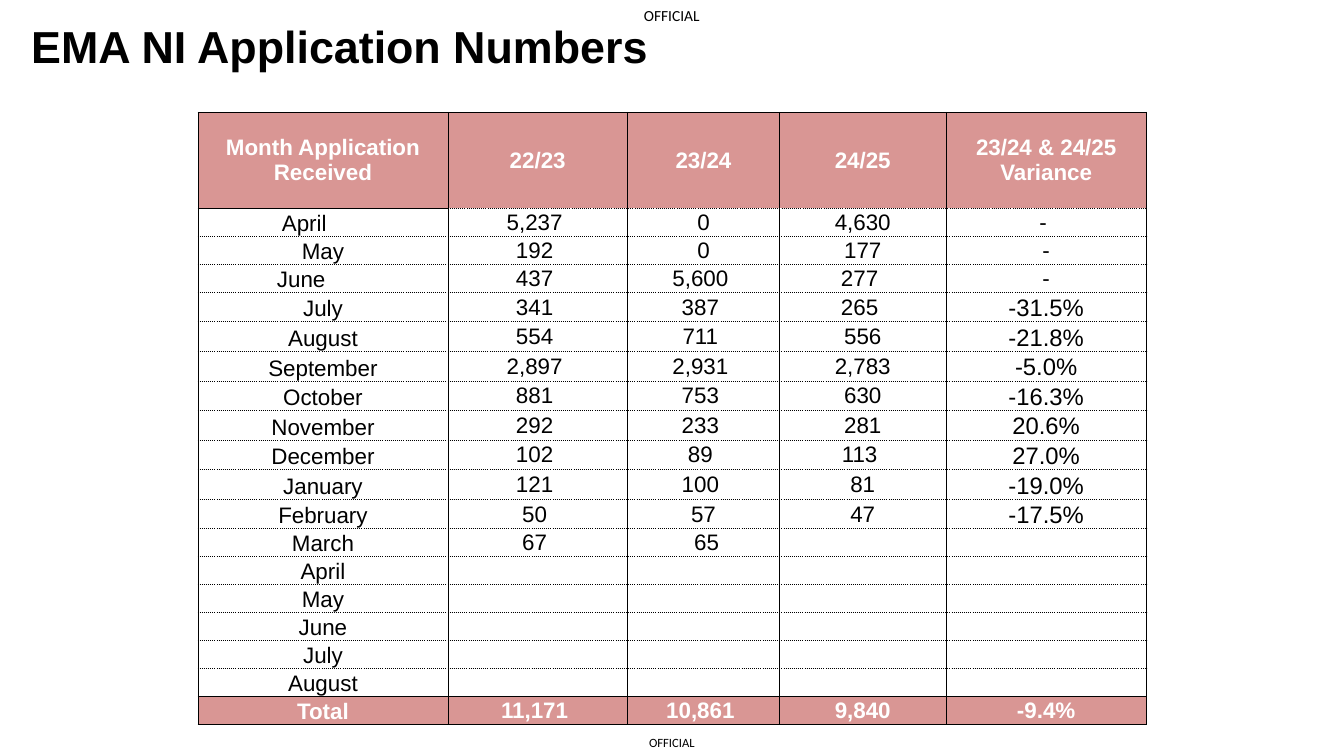
from dataclasses import dataclass

import lxml.etree
import pptx
import pptx.dml.color
import pptx.enum.text
import pptx.oxml.ns
import pptx.util

Pt = pptx.util.Pt
RGBColor = pptx.dml.color.RGBColor
Anchor = pptx.enum.text.MSO_ANCHOR
Align = pptx.enum.text.PP_ALIGN
qn = pptx.oxml.ns.qn

BLACK = RGBColor(0x00, 0x00, 0x00)
WHITE = RGBColor(0xFF, 0xFF, 0xFF)
ROSE = RGBColor(0xD9, 0x96, 0x94)

BODY_SIZE = 16
VARIANCE_SIZE = 17
CELL_INSET = 0.7
HEADER_HEIGHT = 68.6
ROW_HEIGHT = 20
VARIANCE_ROW_HEIGHT = 20.95
COLUMN_WIDTHS = (178.6, 128.2, 108.7, 118.8, 143.3)


@dataclass(frozen=True)
class Marking:
    left: float
    top: float
    width: float
    height: float
    size: float


@dataclass(frozen=True)
class Record:
    """One table row; month_shift is extra space to the right of the month."""
    values: tuple[str, ...]
    month_shift: float = 0

    @property
    def has_variance(self) -> bool:
        return self.values[-1].endswith("%")


MARKINGS = (
    Marking(453.6, 520.6, 52.6, 19.4, 9),
    Marking(448.6, 0, 62.6, 22.3, 11),
)
HEADINGS = Record(("Month Application Received", "22/23", "23/24", "24/25",
                   "23/24 & 24/25 Variance"))
MONTHS = (
    Record(("April", "5,237 ", "0", "4,630", "- "), month_shift=26.7),
    Record(("May", "192 ", "0", "177", "-")),
    Record(("June", "437 ", "5,600 ", "277 ", "-"), month_shift=31.1),
    Record(("July", "341 ", "387 ", "265 ", "-31.5%")),
    Record(("August", "554 ", "711 ", "556", "-21.8%")),
    Record(("September", "2,897 ", "2,931 ", "2,783", "-5.0%")),
    Record(("October", "881 ", "753 ", "630", "-16.3%")),
    Record(("November", "292 ", "233 ", "281", "20.6%")),
    Record(("December", "102 ", "89 ", "113 ", "27.0%")),
    Record(("January", "121 ", "100 ", "81", "-19.0%")),
    Record(("February", "50 ", "57", "47", "-17.5%")),
    Record(("March", "67 ", " 65", "", "")),
    *(Record((month, "", "", "", ""))
      for month in ("April", "May", "June", "July", "August")),
)
TOTAL = Record(("Total", "11,171 ", "10,861 ", "9,840", "-9.4%"))
RECORDS = (HEADINGS, *MONTHS, TOTAL)
TOTAL_ROW = len(RECORDS) - 1


def add_run(paragraph, text: str, size: float, font: str = "Arial",
            color: RGBColor = BLACK, bold: bool = False) -> None:
    run = paragraph.add_run()
    run.text = text
    run.font.size = Pt(size)
    run.font.name = font
    run.font.bold = bold
    run.font.color.rgb = color


def set_insets(target, left: float, top: float, right: float, bottom: float) -> None:
    target.margin_left, target.margin_top = Pt(left), Pt(top)
    target.margin_right, target.margin_bottom = Pt(right), Pt(bottom)


def add_marking(slide, marking: Marking) -> None:
    label = slide.shapes.add_textbox(Pt(marking.left), Pt(marking.top),
                                     Pt(marking.width), Pt(marking.height))
    frame = label.text_frame
    frame.word_wrap = True
    frame.vertical_anchor = Anchor.MIDDLE
    set_insets(frame, 0, 0, 0, 0)
    frame.paragraphs[0].alignment = Align.CENTER
    add_run(frame.paragraphs[0], "OFFICIAL", marking.size, font="Calibri")


def add_border(cell, side: str, solid: bool) -> None:
    line = lxml.etree.SubElement(cell._tc.get_or_add_tcPr(), qn(f"a:ln{side}"),
                                 w=str(Pt(0.5)))
    fill = lxml.etree.SubElement(line, qn("a:solidFill"))
    lxml.etree.SubElement(fill, qn("a:srgbClr"), val=str(BLACK))
    lxml.etree.SubElement(line, qn("a:prstDash"), val="solid" if solid else "dot")


def is_solid_edge(edge: int, column: int) -> bool:
    """Tell whether the horizontal rule above row number edge is unbroken."""
    return edge in (0, TOTAL_ROW, TOTAL_ROW + 1) or (edge == 1 and column == 0)


def fill_cell(cell, record: Record, row: int, column: int) -> None:
    banded = row in (0, TOTAL_ROW)
    variance = column == 4 and record.has_variance and not banded
    bottom = row > 0 and (column == 0 or variance)
    cell.vertical_anchor = Anchor.BOTTOM if bottom else Anchor.MIDDLE
    shift = record.month_shift if column == 0 else 0
    set_insets(cell, CELL_INSET, CELL_INSET, CELL_INSET + shift, 0)

    add_border(cell, "L", True)
    add_border(cell, "R", True)
    add_border(cell, "T", is_solid_edge(row, column))
    add_border(cell, "B", is_solid_edge(row + 1, column))
    if banded:
        cell.fill.solid()
        cell.fill.fore_color.rgb = ROSE
    else:
        cell.fill.background()

    paragraph = cell.text_frame.paragraphs[0]
    paragraph.alignment = Align.CENTER
    if record.values[column]:
        add_run(paragraph, record.values[column],
                VARIANCE_SIZE if variance else BODY_SIZE,
                color=WHITE if banded else BLACK, bold=banded)
    else:
        lxml.etree.SubElement(paragraph._p, qn("a:endParaRPr"),
                              sz=str(BODY_SIZE * 100))


def row_height(row: int) -> float:
    if row == 0:
        return HEADER_HEIGHT
    tall = RECORDS[row].has_variance and row != TOTAL_ROW
    return VARIANCE_ROW_HEIGHT if tall else ROW_HEIGHT


def add_applications(slide) -> None:
    heights = [row_height(row) for row in range(len(RECORDS))]
    applications = slide.shapes.add_table(
        len(RECORDS), len(COLUMN_WIDTHS), Pt(141.4), Pt(80.1),
        Pt(sum(COLUMN_WIDTHS)), Pt(sum(heights))).table
    applications.first_row = False
    applications.horz_banding = False
    for column, width in enumerate(COLUMN_WIDTHS):
        applications.columns[column].width = Pt(width)
    for row, record in enumerate(RECORDS):
        applications.rows[row].height = Pt(heights[row])
        for column in range(len(COLUMN_WIDTHS)):
            fill_cell(applications.cell(row, column), record, row, column)


def add_title(slide) -> None:
    title = slide.shapes.title
    title.left, title.top = Pt(15.1), Pt(9.4)
    title.width, title.height = Pt(779.8), Pt(46.1)
    frame = title.text_frame
    frame.word_wrap = True
    frame.auto_size = pptx.enum.text.MSO_AUTO_SIZE.NONE
    frame.vertical_anchor = Anchor.TOP
    set_insets(frame, 7.2, 3.6, 7.2, 3.6)
    frame.paragraphs[0].alignment = Align.LEFT
    add_run(frame.paragraphs[0], "EMA NI Application Numbers", 32, bold=True)


def main() -> None:
    deck = pptx.Presentation()
    deck.slide_width, deck.slide_height = Pt(960), Pt(540)
    slide = deck.slides.add_slide(deck.slide_layouts[5])
    for marking in MARKINGS:
        add_marking(slide, marking)
    add_title(slide)
    add_applications(slide)
    deck.save("out.pptx")


if __name__ == "__main__":
    main()
